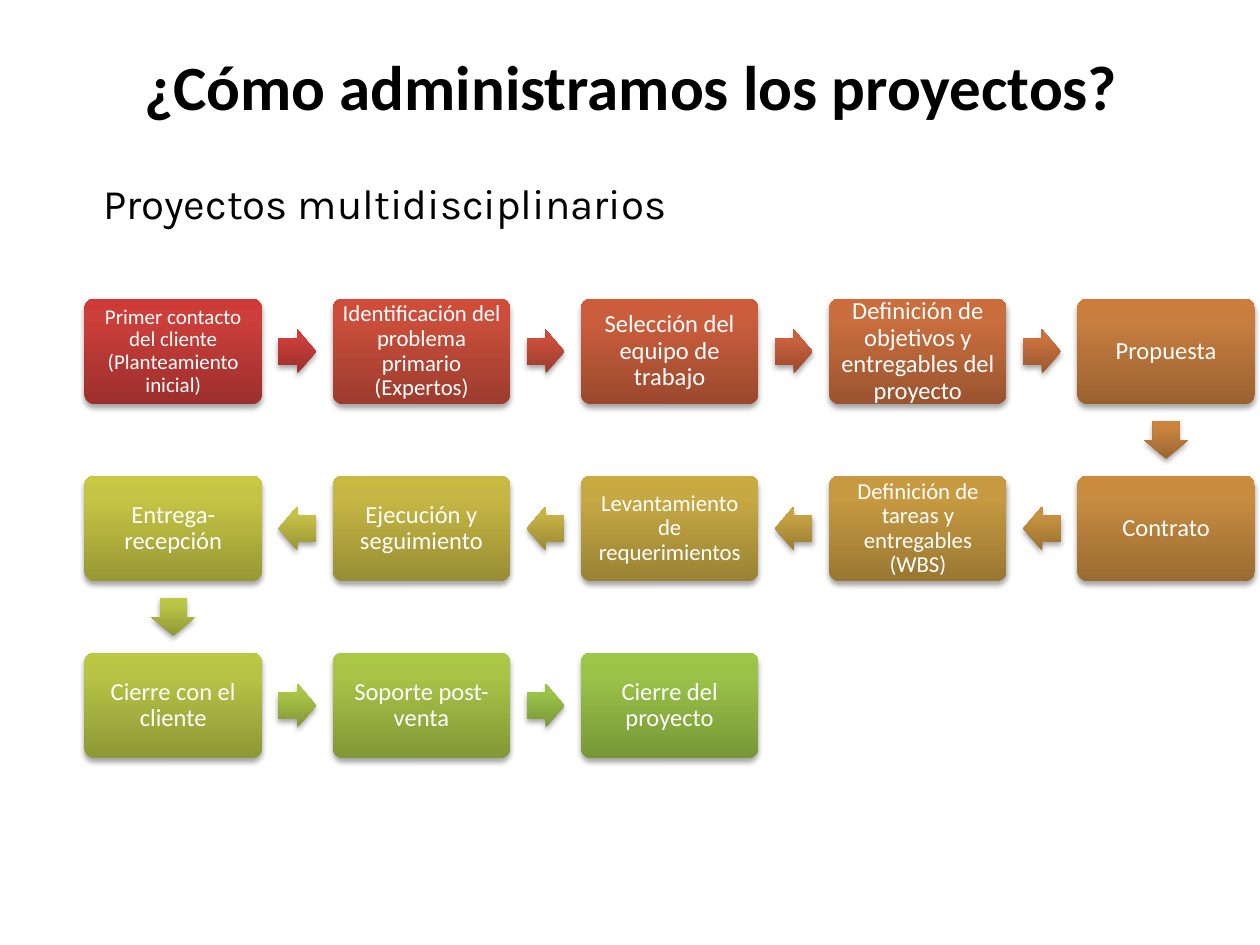
from lxml import etree
from pptx import Presentation
from pptx.dml.color import RGBColor
from pptx.enum.shapes import MSO_SHAPE
from pptx.enum.text import MSO_ANCHOR, MSO_AUTO_SIZE, PP_ALIGN
from pptx.oxml import parse_xml
from pptx.oxml.ns import nsdecls, qn
from pptx.util import Inches, Pt

ROUNDED, ARROW = MSO_SHAPE.ROUNDED_RECTANGLE, MSO_SHAPE.RIGHT_ARROW
CENTER, LEFT = PP_ALIGN.CENTER, PP_ALIGN.LEFT
MIDDLE = MSO_ANCHOR.MIDDLE
NO_FIT = MSO_AUTO_SIZE.NONE
TITLE_ONLY = 5

COLUMNS = 5
GRID_LEFT, GRID_TOP = 0.67, 2.37
COLUMN_STEP, ROW_STEP = 1.97, 1.405
BOX_WIDTH, BOX_HEIGHT = 1.41, 0.84
ARROW_LENGTH, ARROW_WIDTH = 0.3, 0.35

STEPS = [
    ("Primer contacto del cliente (Planteamiento inicial)", 12),
    ("Identificación del problema primario (Expertos)", 13),
    ("Selección del equipo de trabajo", 14),
    ("Definición de objetivos y entregables del proyecto", 14),
    ("Propuesta", 14),
    ("Contrato", 14),
    ("Definición de tareas y entregables (WBS)", 13),
    ("Levantamiento de requerimientos", 13),
    ("Ejecución y seguimiento", 14),
    ("Entrega-recepción", 14),
    ("Cierre con el cliente", 14),
    ("Soporte post-venta", 14),
    ("Cierre del proyecto", 14),
]

# Bottom, upper and top shade at the steps where the colour ramp bends
RAMP = [
    (0, ("9C2F2D", "CB3E3A", "CE3B37")),
    (4, ("9A6130", "C87E3F", "CC7E3C")),
    (9, ("989835", "C5C545", "C8C942")),
    (12, ("779737", "9BC348", "9DC746")),
]


def color(hex_text):
    return RGBColor.from_string(hex_text)


def blend(first, second, share):
    pairs = zip(color(first), color(second))
    return "".join(f"{round(a + (b - a) * share):02X}" for a, b in pairs)


def shades_at(position):
    """Return the three gradient shades at a possibly fractional step."""
    for (start, low), (end, high) in zip(RAMP, RAMP[1:]):
        if position <= end:
            break
    share = (position - start) / (end - start)
    return [blend(a, b, share) for a, b in zip(low, high)]


def cell_center(index):
    """Return the centre of a step; every second row runs backwards."""
    row, column = divmod(index, COLUMNS)
    if row % 2:
        column = COLUMNS - 1 - column
    return (GRID_LEFT + column * COLUMN_STEP + BOX_WIDTH / 2,
            GRID_TOP + row * ROW_STEP + BOX_HEIGHT / 2)


class ProcessSlide:
    text_font, subtitle_font = "Calibri", "Karla"
    dark, light = "000000", "FFFFFF"

    def __init__(self, deck):
        self.slide = deck.slides.add_slide(deck.slide_layouts[TITLE_ONLY])

    def set_text(self, shape, text, size, font, ink, align=CENTER, bold=False):
        frame = shape.text_frame
        frame.text = text
        frame.word_wrap = True
        frame.auto_size = NO_FIT
        frame.vertical_anchor = MIDDLE
        paragraph = frame.paragraphs[0]
        paragraph.alignment = align
        for run in paragraph.runs:
            run.font.size = Pt(size)
            run.font.name = font
            run.font.bold = bold
            run.font.color.rgb = color(ink)

    def title(self, text):
        title = self.slide.shapes.title
        title.left, title.top = Inches(0.01), Inches(-0.03)
        title.width, title.height = Inches(10), Inches(1.42)
        self.set_text(title, text, 36, self.text_font, self.dark, bold=True)

    def subtitle(self, text):
        subtitle = self.slide.shapes.add_textbox(
            Inches(0.72), Inches(1.31), Inches(9), Inches(0.59))
        self.set_text(subtitle, text, 24, self.subtitle_font, self.dark, LEFT)

    def glossy(self, kind, center, width, height, shades):
        """Add a shape with a vertical gradient and a soft shadow."""
        x, y = center
        shape = self.slide.shapes.add_shape(
            kind, Inches(x - width / 2), Inches(y - height / 2),
            Inches(width), Inches(height))
        shape.line.fill.background()
        shape.shadow.inherit = False
        stops = "".join(
            f'<a:gs pos="{pos}"><a:srgbClr val="{shade}"/></a:gs>'
            for pos, shade in zip((0, 80000, 100000), shades))
        properties = shape.element.spPr
        properties.find(qn("a:prstGeom")).addnext(parse_xml(
            f'<a:gradFill {nsdecls("a")} rotWithShape="0">'
            f'<a:gsLst>{stops}</a:gsLst>'
            '<a:lin ang="16200000" scaled="0"/></a:gradFill>'))
        shadow = etree.SubElement(
            properties.find(qn("a:effectLst")), qn("a:outerShdw"),
            blurRad="40000", dist="23000", dir="5400000", rotWithShape="0")
        black = etree.SubElement(shadow, qn("a:srgbClr"), val="000000")
        etree.SubElement(black, qn("a:alpha"), val="35000")
        return shape

    def step(self, index, text, size):
        box = self.glossy(ROUNDED, cell_center(index), BOX_WIDTH, BOX_HEIGHT,
                          shades_at(index))
        box.adjustments[0] = 0.1
        self.set_text(box, text, size, self.text_font, self.light)
        frame = box.text_frame
        frame.margin_left = frame.margin_right = Pt(size * 0.3)
        frame.margin_top = frame.margin_bottom = Pt(size * 0.3)
        frame.paragraphs[0].line_spacing = 0.9

    def arrow(self, index):
        """Point from one step to the next, halfway between them."""
        (x1, y1), (x2, y2) = cell_center(index), cell_center(index + 1)
        last = len(STEPS) - 1
        arrow = self.glossy(ARROW, ((x1 + x2) / 2, (y1 + y2) / 2),
                            ARROW_LENGTH, ARROW_WIDTH,
                            shades_at(index * last / (last - 1)))
        arrow.adjustments[0], arrow.adjustments[1] = 0.6, 0.5
        if y2 > y1:
            arrow.rotation = 90
        elif x2 < x1:
            arrow.rotation = 180


def main():
    deck = Presentation()
    deck.slide_width, deck.slide_height = Inches(10), Inches(7.5)
    process = ProcessSlide(deck)
    process.title("¿Cómo administramos los proyectos?")
    process.subtitle("Proyectos multidisciplinarios")
    for index, (text, size) in enumerate(STEPS):
        process.step(index, text, size)
        if index < len(STEPS) - 1:
            process.arrow(index)
    deck.save("out.pptx")


if __name__ == "__main__":
    main()
